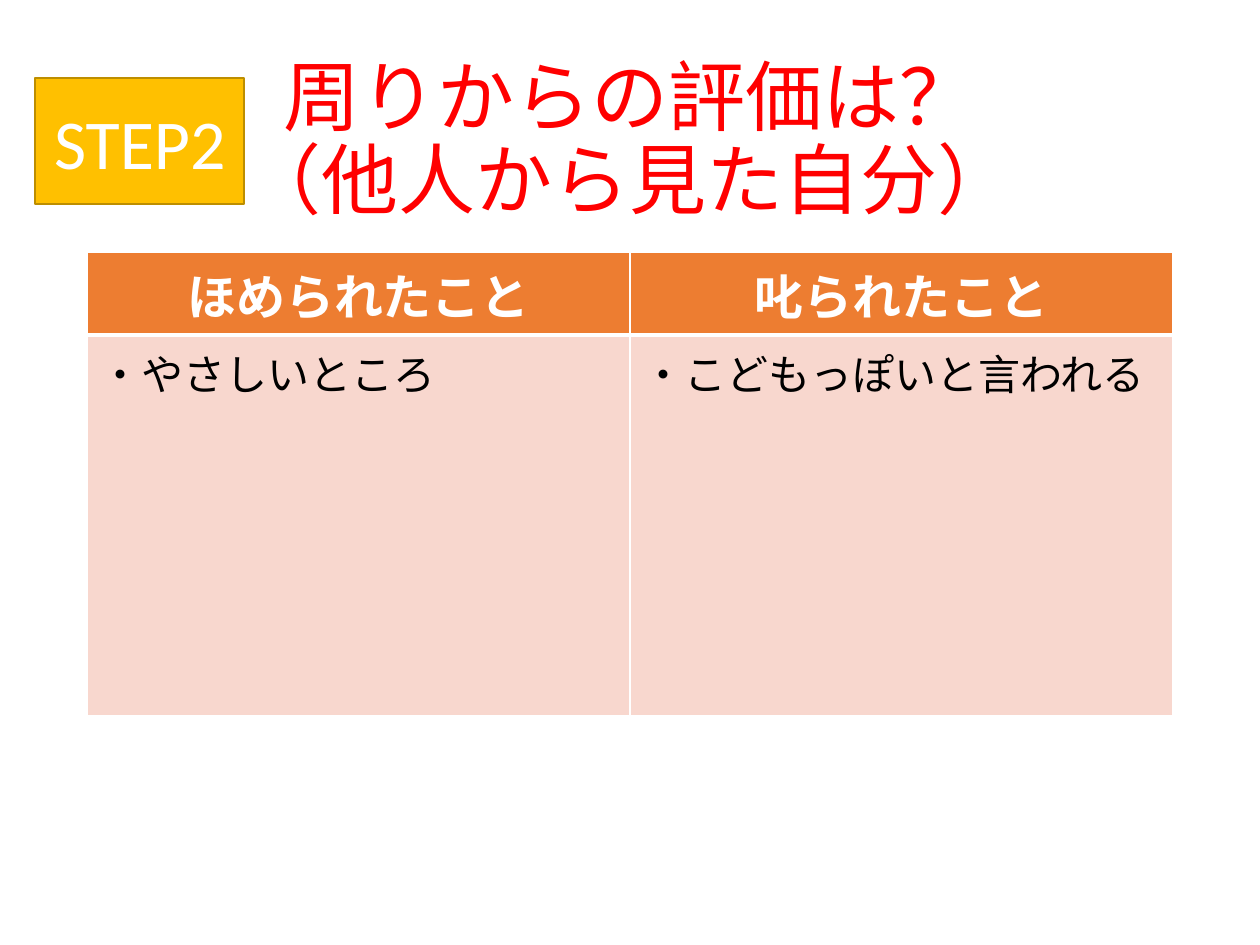
from dataclasses import dataclass

from lxml.etree import SubElement
from pptx import Presentation
from pptx.dml.color import RGBColor
from pptx.enum.shapes import MSO_SHAPE
from pptx.enum.text import MSO_ANCHOR, PP_ALIGN
from pptx.oxml.ns import qn
from pptx.util import Inches, Pt

COLORS = {
    "red": "FF0000",
    "white": "FFFFFF",
    "black": "000000",
    "gold": "FFC000",
    "bronze": "BD8E00",
    "orange": "ED7D31",
    "pink": "F8D7CE",
}


@dataclass
class Style:
    size: int
    color: str
    bold: bool = False
    align: PP_ALIGN = PP_ALIGN.CENTER


@dataclass
class Row:
    height: float
    fill: str
    rule: int
    style: Style
    texts: tuple[str, ...]


TITLE = Style(44, "red")
BADGE = Style(40, "white")
ROWS = (
    Row(0.66, "orange", 3, Style(28, "white", True),
        ("ほめられたこと", "叱られたこと")),
    Row(3.02, "pink", 1, Style(24, "black", align=PP_ALIGN.LEFT),
        ("・やさしいところ", "・こどもっぽいと言われる")),
)
LEFT, WIDTH = 0.69, 8.62


def shade(name: str) -> RGBColor:
    return RGBColor.from_string(COLORS[name])


def write(frame, text: str, style: Style) -> None:
    frame.text = text
    for para in frame.paragraphs:
        para.alignment = style.align
        for run in para.runs:
            run.font.name = "Calibri"
            run.font.size = Pt(style.size)
            run.font.bold = style.bold
            run.font.color.rgb = shade(style.color)


def add_edges(cell, top: int, bottom: int) -> None:
    """Draw white cell borders; top and bottom are widths in points."""
    props = cell._tc.get_or_add_tcPr()
    widths = {"lnL": 1, "lnR": 1, "lnT": top, "lnB": bottom}
    for spot, (tag, width) in enumerate(widths.items()):
        line = props.makeelement(qn(f"a:{tag}"), {"w": str(Pt(width))})
        fill = SubElement(line, qn("a:solidFill"))
        SubElement(fill, qn("a:srgbClr"), val=COLORS["white"])
        props.insert(spot, line)


def add_title(slide) -> None:
    box = slide.shapes.add_textbox(
        Inches(LEFT), Inches(0.4), Inches(WIDTH), Inches(1.45))
    frame = box.text_frame
    frame.word_wrap = True
    frame.vertical_anchor = MSO_ANCHOR.MIDDLE
    write(frame, "周りからの評価は？\v（他人から見た自分）", TITLE)
    frame.paragraphs[0].line_spacing = 0.9


def add_grid(slide) -> None:
    total = sum(row.height for row in ROWS)
    table = slide.shapes.add_table(
        len(ROWS), len(ROWS[0].texts),
        Inches(LEFT), Inches(2), Inches(WIDTH), Inches(total)).table
    top = 1
    for row, line in zip(ROWS, table.rows):
        line.height = Inches(row.height)
        for text, cell in zip(row.texts, line.cells):
            write(cell.text_frame, text, row.style)
            cell.fill.solid()
            cell.fill.fore_color.rgb = shade(row.fill)
            add_edges(cell, top, row.rule)
        top = row.rule


def add_badge(slide) -> None:
    badge = slide.shapes.add_shape(
        MSO_SHAPE.RECTANGLE,
        Inches(0.28), Inches(0.62), Inches(1.66), Inches(1))
    badge.shadow.inherit = False
    badge.fill.solid()
    badge.fill.fore_color.rgb = shade("gold")
    badge.line.color.rgb = shade("bronze")
    badge.line.width = Pt(1)
    badge.text_frame.vertical_anchor = MSO_ANCHOR.MIDDLE
    write(badge.text_frame, "STEP2", BADGE)


def main() -> None:
    deck = Presentation()
    deck.slide_width = Inches(10)
    deck.slide_height = Inches(7.5)
    slide = deck.slides.add_slide(deck.slide_layouts[6])
    add_title(slide)
    add_grid(slide)
    add_badge(slide)
    deck.save("out.pptx")


if __name__ == "__main__":
    main()
